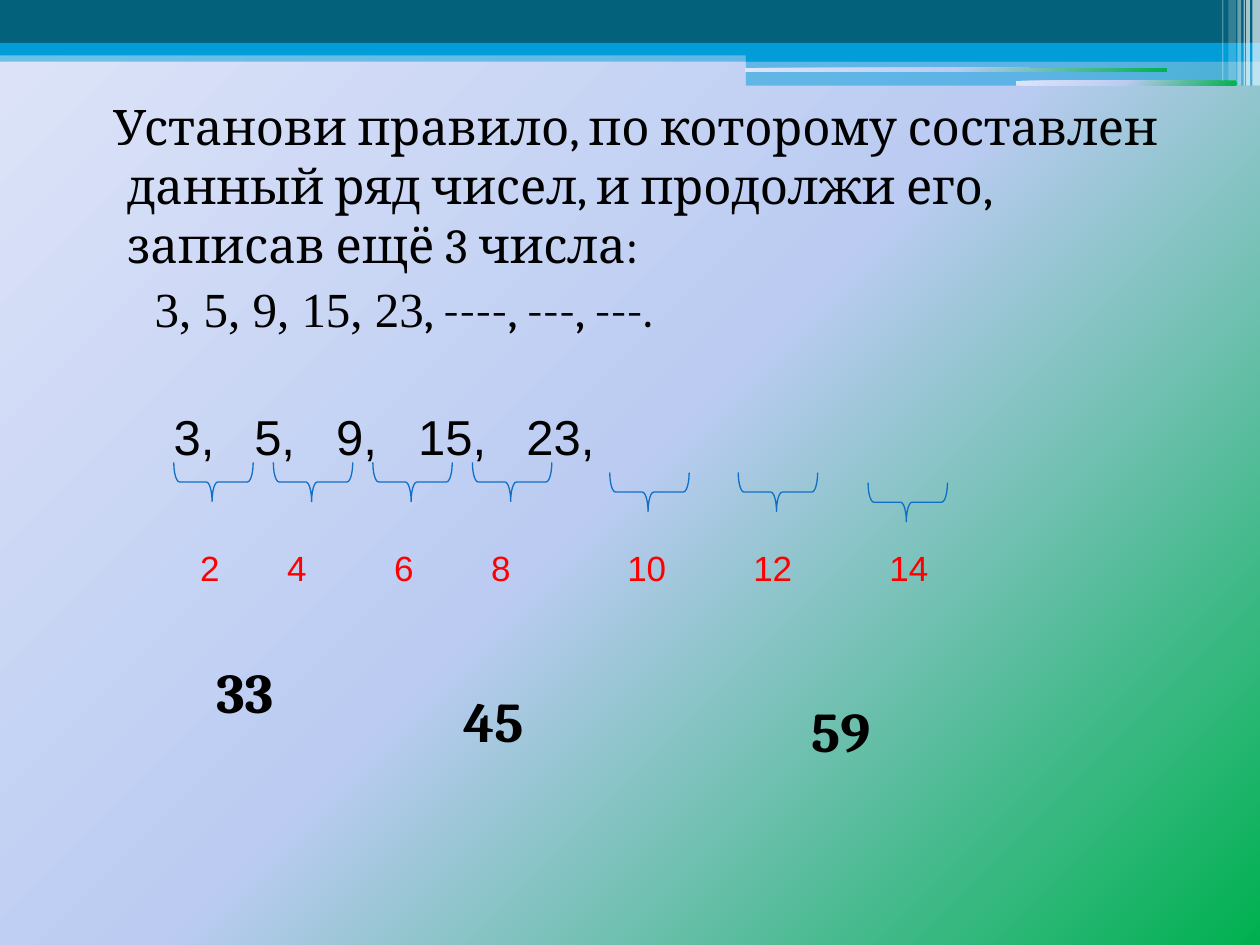
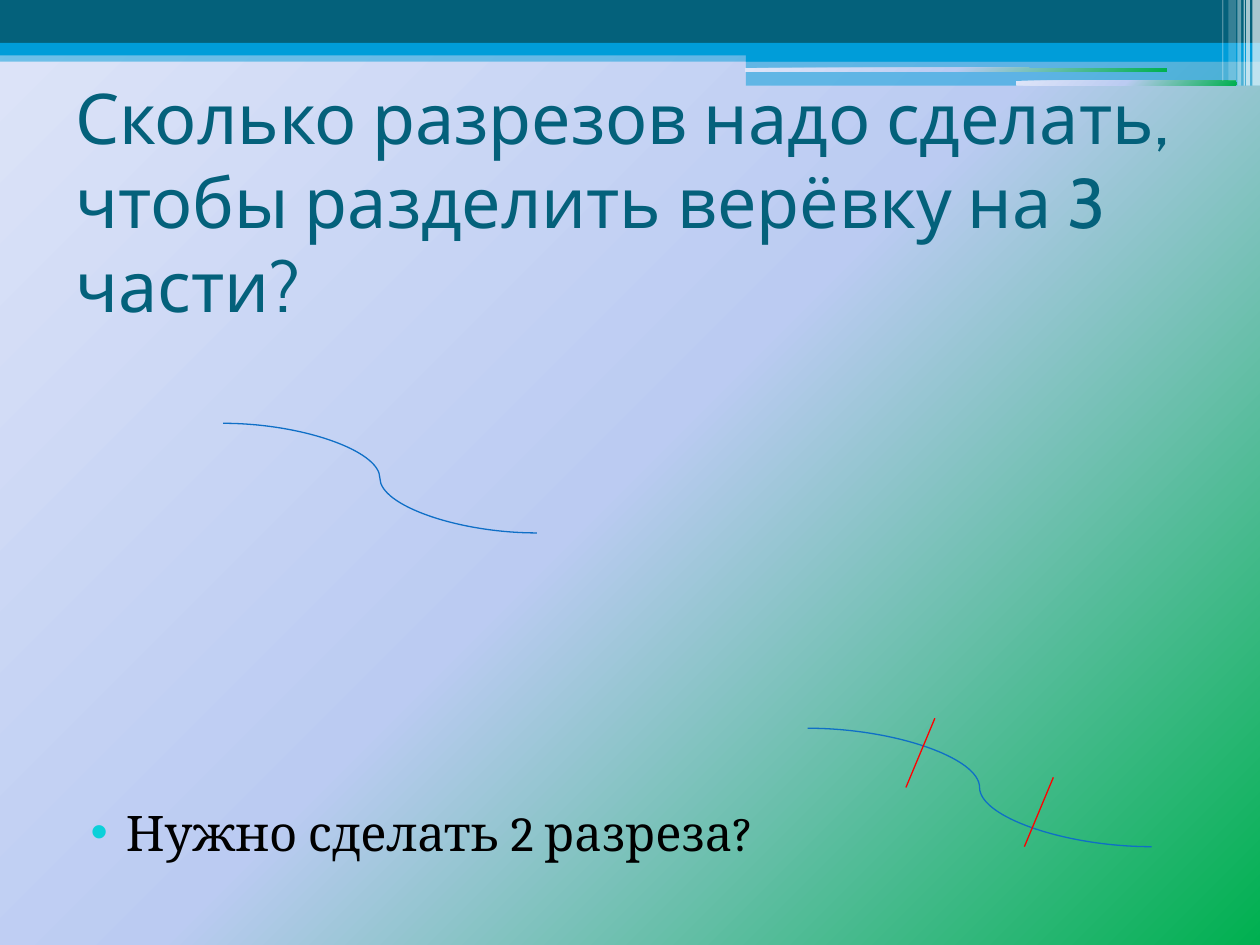
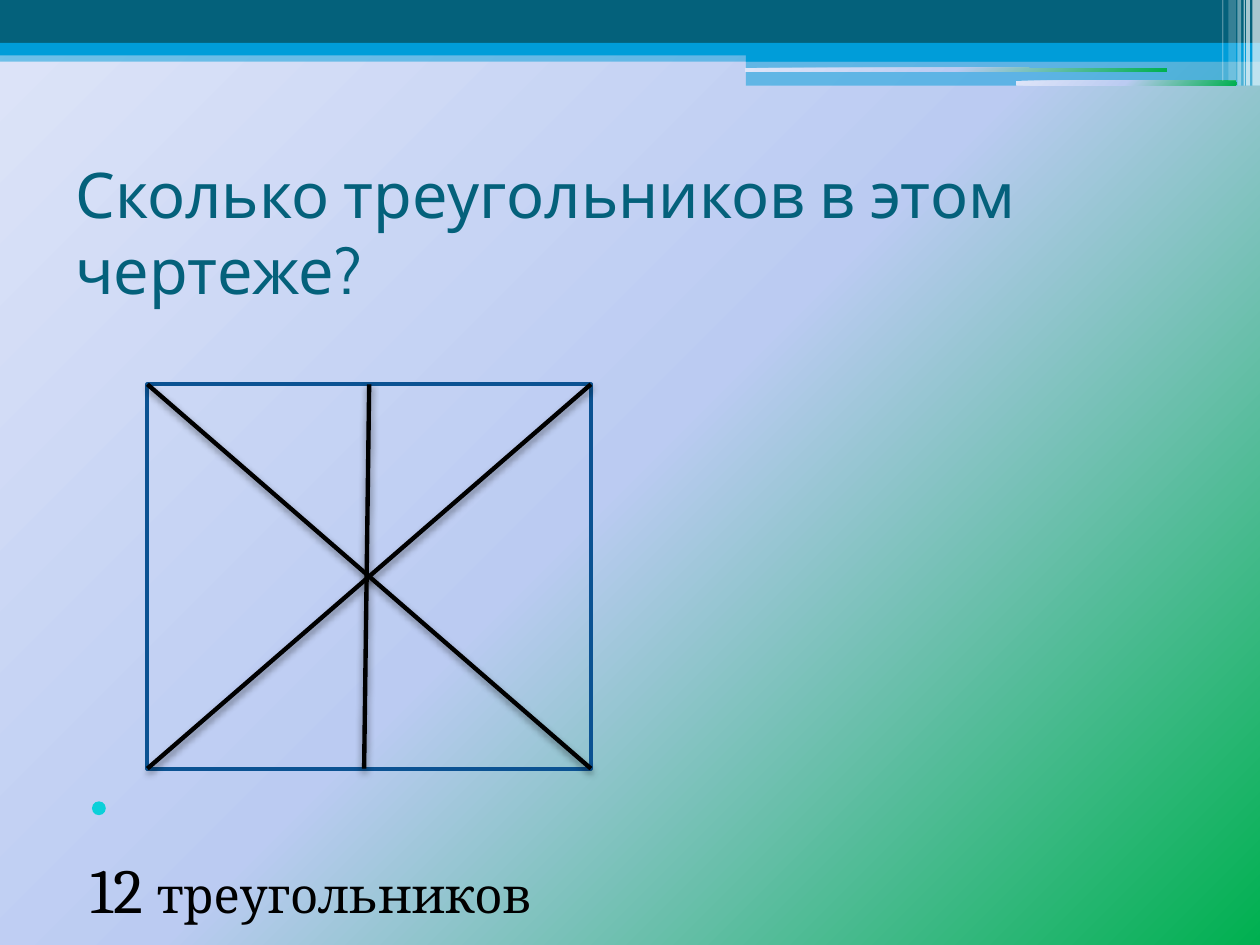
from dataclasses import dataclass

from lxml.etree import SubElement
from pptx import Presentation
from pptx.dml.color import RGBColor
from pptx.enum.shapes import MSO_CONNECTOR, MSO_SHAPE
from pptx.enum.text import MSO_ANCHOR
from pptx.oxml.ns import qn
from pptx.util import Inches, Pt


@dataclass(frozen=True)
class Theme:
    dark: str = "04617B"
    bright: str = "009DD9"
    line: str = "0F6FC6"
    frame: str = "0B5292"
    bullet: str = "0BD0D9"
    accent: str = "FF0000"
    text: str = "000000"
    white: str = "FFFFFF"
    backdrop: tuple = ((0, "00B050"), (50, "BBCBF2"), (100, "DEE5F8"))
    title_font: str = "Cabin"
    body_font: str = "Cambria"
    number_font: str = "Arial"
    series_font: str = "Times New Roman"
    title_size: int = 40
    small_title_size: int = 36
    answer_size: int = 32
    body_size: int = 28
    small_size: int = 20


THEME = Theme()

# The grid has 10 columns and 7.5 rows of one inch each.
COLUMNS, ROWS = 10, 7.5

# Header bands: left, top, width, height, colour, opacity in percent
BANDS = (
    (0, 0.4, 10, 0.09, THEME.bright, 50),
    (0, 0, 10, 0.34, THEME.dark, 100),
    (0, 0.34, 10, 0.1, THEME.bright, 100),
    (5.92, 0.39, 4.08, 0.1, THEME.bright, 100),
    (5.92, 0.48, 4.08, 0.2, THEME.bright, 50),
)
SLOTS = ((5.91, 0.54, 3.35, 0.03), (8.06, 0.64, 1.75, 0.04))
# Light stripes in the corner: left, width, height, opacity in percent
STRIPES = (
    (9.94, 0.06, 0.68, 65),
    (9.89, 0.03, 0.68, 65),
    (9.87, 0.01, 0.68, 60),
    (9.82, 0.03, 0.68, 40),
    (9.75, 0.06, 0.64, 20),
    (9.7, 0.01, 0.64, 30),
)


def grid(*cells):
    return [Inches(cell) for cell in cells]


def color(code):
    return RGBColor.from_string(code)


# Fills and shapes
def fill_backdrop(fill, element):
    """Gradient spreading from the bottom right corner."""
    fill.gradient()
    gradient = element.find(".//" + qn("a:gradFill"))
    for child in list(gradient):
        gradient.remove(child)
    stops = SubElement(gradient, qn("a:gsLst"))
    for position, code in THEME.backdrop:
        stop = SubElement(stops, qn("a:gs"), pos=str(position * 1000))
        SubElement(stop, qn("a:srgbClr"), val=code)
    spread = SubElement(gradient, qn("a:path"), path="circle")
    SubElement(spread, qn("a:fillToRect"), l="100000", t="100000")


def add_plain_shape(page, kind, area, fill=None, opacity=100):
    shape = page.shapes.add_shape(kind, *grid(*area))
    shape.shadow.inherit = False
    shape.line.fill.background()
    if fill is None:
        shape.fill.background()
        return shape
    shape.fill.solid()
    shape.fill.fore_color.rgb = color(fill)
    if opacity < 100:
        tint = shape.element.spPr.find(".//" + qn("a:srgbClr"))
        SubElement(tint, qn("a:alpha"), val=str(opacity * 1000))
    return shape


def style_line(shape, code, width):
    shape.line.color.rgb = color(code)
    shape.line.width = Pt(width)


def add_line(page, start, end, code, width=0.75, kind=MSO_CONNECTOR.STRAIGHT, shadow=False):
    line = page.shapes.add_connector(kind, *grid(*start, *end))
    style_line(line, code, width)
    effects = SubElement(line.element.spPr, qn("a:effectLst"))
    if shadow:
        outer = SubElement(effects, qn("a:outerShdw"), blurRad=str(Pt(4)), dist=str(Pt(2)),
                           dir="5400000", rotWithShape="0")
        tint = SubElement(outer, qn("a:srgbClr"), val=THEME.text)
        SubElement(tint, qn("a:alpha"), val="45000")


def add_brace(page, left, top):
    brace = add_plain_shape(page, MSO_SHAPE.LEFT_BRACE, (left, top, 0.31, 0.63))
    brace.adjustments[0], brace.adjustments[1] = 0.147, 0.518
    brace.element.spPr.find(qn("a:xfrm")).set("flipH", "1")
    brace.rotation = 90
    style_line(brace, THEME.line, 0.75)


# Text
def style_font(font, name, size, code=THEME.text, bold=False):
    font.name, font.size, font.bold = name, Pt(size), bold
    font.color.rgb = color(code)


def add_box(page, area, anchor=MSO_ANCHOR.TOP):
    frame = page.shapes.add_textbox(*grid(*area)).text_frame
    frame.word_wrap = True
    frame.vertical_anchor = anchor
    return frame


def indent(para, margin, first):
    properties = para._p.get_or_add_pPr()
    properties.set("marL", str(Inches(margin)))
    properties.set("indent", str(Inches(first)))
    return properties


def add_text(page, area, words, name, size, code=THEME.text, bold=False, anchor=MSO_ANCHOR.TOP):
    para = add_box(page, area, anchor).paragraphs[0]
    para.text = words
    style_font(para.font, name, size, code, bold)
    return para


def add_title(page, area, words, size):
    add_text(page, area, words, THEME.title_font, size, THEME.dark, anchor=MSO_ANCHOR.MIDDLE)


def add_spans(para, spans):
    """Spans are (words, font name, size)."""
    for words, name, size in spans:
        span = para.add_run()
        span.text = words
        style_font(span.font, name, size)


def add_number_row(page, area, numbers, stops, size, code):
    para = add_box(page, area).paragraphs[0]
    tabs = SubElement(para._p.get_or_add_pPr(), qn("a:tabLst"))
    for stop in stops:
        SubElement(tabs, qn("a:tab"), pos=str(Inches(stop)), algn="l")
    para.add_run().text = "\t".join(numbers)
    style_font(para.font, THEME.number_font, size, code)


# Pages
def add_page(deck):
    page = deck.slides.add_slide(deck.slide_layouts[6])
    fill_backdrop(page.background.fill, page.element)
    for *area, code, opacity in BANDS:
        add_plain_shape(page, MSO_SHAPE.RECTANGLE, area, code, opacity)
    for area in SLOTS:
        slot = add_plain_shape(page, MSO_SHAPE.ROUNDED_RECTANGLE, area)
        fill_backdrop(slot.fill, slot.element)
    for left, width, height, opacity in STRIPES:
        add_plain_shape(page, MSO_SHAPE.RECTANGLE, (left, 0, width, height), THEME.white, opacity)
    return page


def add_series_page(deck):
    page = add_page(deck)
    frame = add_box(page, (0.51, 0.72, 9, 2.1))
    task = frame.paragraphs[0]
    task.text = ("Установи правило, по которому составлен данный ряд чисел, "
                 "и продолжи его, записав ещё 3 числа:")
    indent(task, 0.4, -0.11)
    style_font(task.font, THEME.body_font, THEME.body_size)
    series = frame.add_paragraph()
    indent(series, 0.62, 0)
    series.space_before = Pt(3)
    add_spans(series, (("3, 5, 9, 15, 23", THEME.series_font, THEME.body_size),
                       (", ----, ---, ---.", THEME.body_font, THEME.body_size)))

    # Numbers, braces and differences
    add_number_row(page, (1.28, 3.18, 5, 0.55), ("3,", "5,", "9,", "15,", "23,"),
                   (0.64, 1.29, 1.94, 2.8), THEME.body_size, THEME.text)
    known = [(1.54 + 0.79 * step, 3.51) for step in range(4)]
    for left, top in known + [(5, 3.59), (6.02, 3.59), (7.05, 3.67)]:
        add_brace(page, left, top)
    add_number_row(page, (1.49, 4.29, 7, 0.45), ("2", "4", "6", "8", "10", "12", "14"),
                   (0.69, 1.54, 2.31, 3.39, 4.39, 5.47), THEME.small_size, THEME.accent)

    # Answers
    for answer, left, top in (("33", 1.62, 5.17), ("45", 3.58, 5.4), ("59", 6.34, 5.48)):
        add_text(page, (left, top, 0.94, 0.64), answer, THEME.body_font, THEME.answer_size, bold=True)


def add_rope_page(deck):
    page = add_page(deck)
    add_title(page, (0.5, 0.3, 9, 2.59),
              "Сколько разрезов надо сделать, чтобы разделить верёвку на 3 части?", THEME.title_size)
    para = add_box(page, (0.5, 6.32, 9.19, 0.6)).paragraphs[0]
    properties = indent(para, 0.4, -0.28)
    SubElement(SubElement(properties, qn("a:buClr")), qn("a:srgbClr"), val=THEME.bullet)
    SubElement(properties, qn("a:buFont"), typeface=THEME.number_font)
    SubElement(properties, qn("a:buChar"), char="•")
    para.add_run().text = "Нужно сделать 2 разреза?"
    style_font(para.font, THEME.body_font, THEME.body_size)

    # Ropes and cuts
    for start, end in (((1.77, 3.36), (4.26, 4.23)), ((6.41, 5.78), (9.14, 6.72))):
        add_line(page, start, end, THEME.line, kind=MSO_CONNECTOR.CURVE)
    for left, top in ((7.19, 5.7), (8.13, 6.17)):
        add_line(page, (left + 0.23, top), (left, top + 0.55), THEME.accent)


def add_triangle_page(deck):
    page = add_page(deck)
    add_title(page, (0.5, 1.25, 9, 1.17), "Сколько треугольников в этом чертеже?", THEME.small_title_size)
    add_plain_shape(page, MSO_SHAPE.OVAL, (0.73, 6.36, 0.11, 0.11), THEME.bullet)
    answer = add_box(page, (0.62, 6.7, 8.88, 0.7)).paragraphs[0]
    add_spans(answer, (("12 ", THEME.body_font, THEME.small_title_size),
                       ("треугольников", THEME.body_font, THEME.body_size)))

    # Rectangle with its diagonals and midline
    left, top, width, height = 1.17, 3.05, 3.52, 3.05
    right, bottom = left + width, top + height
    frame = add_plain_shape(page, MSO_SHAPE.RECTANGLE, (left, top, width, height))
    style_line(frame, THEME.frame, 2.25)
    for start, end in (((left, bottom), (right, top)),
                       ((left, top), (right, bottom)),
                       ((left + width / 2, top), (2.89, bottom))):
        add_line(page, start, end, THEME.text, 2.5, shadow=True)


def main():
    deck = Presentation()
    deck.slide_width, deck.slide_height = grid(COLUMNS, ROWS)
    add_series_page(deck)
    add_rope_page(deck)
    add_triangle_page(deck)
    deck.save("out.pptx")


if __name__ == "__main__":
    main()
